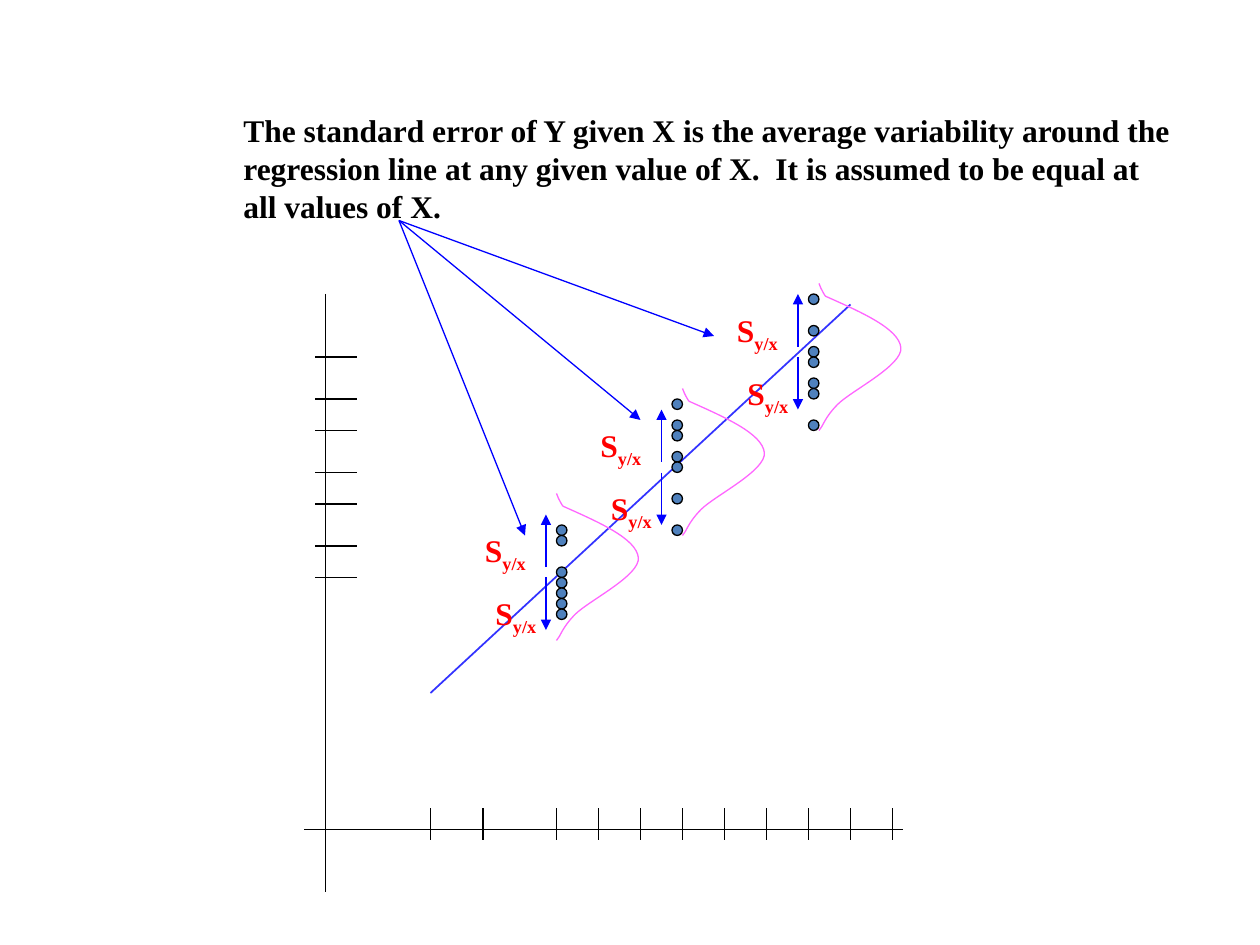
from dataclasses import dataclass

from lxml.etree import SubElement
from pptx import Presentation
from pptx.dml.color import RGBColor
from pptx.enum.shapes import MSO_CONNECTOR, MSO_SHAPE
from pptx.enum.text import MSO_AUTO_SIZE
from pptx.oxml.ns import qn
from pptx.util import Inches, Pt

COLORS = {
    "axis": "000000",
    "regression": "3333FF",
    "arrow": "0000FF",
    "dot": "4F81BD",
    "curve": "FF66FF",
    "caption": "000000",
    "label": "FF0000",
}
FONT = "Times New Roman"
COLUMNS, ROWS = 120, 90
Point = tuple[float, float]


@dataclass(frozen=True)
class Cluster:
    dot_column: int
    dot_rows: tuple[int, ...]
    curve_origin: Point
    arrow_column: int
    arrow_row: int


CLUSTERS = (
    Cluster(77, (28, 31, 33, 34, 36, 37, 40), (78, 27), 76, 33),
    Cluster(53, (50, 51, 54, 55, 56, 57, 58), (53, 47), 52, 54),
    Cluster(64, (38, 40, 41, 43, 44, 47, 50), (65, 37), 63, 44),
)
BELL = (
    (0.6, 1.2), (4.1, 2.76), (7.6, 4.3), (7.8, 6.1), (8, 7.8),
    (3.1, 10.2), (1.8, 11.5), (0.5, 12.8), (0.4, 13.6), (0, 14),
)
BELL_TAIL = ((0.6, 1.2), (0.6, 1.2), (0.2, 0.6), (0, 0))
X_TICKS = (41, 46, *range(53, 86, 4))
Y_TICKS = (34, 38, 41, 45, 48, 52, 55)
POINTER_START = (38, 21)
POINTER_ENDS = ((68, 32), (61, 40), (50, 51))

deck = Presentation()
deck.slide_width, deck.slide_height = Inches(10), Inches(7.5)
page = deck.slides.add_slide(deck.slide_layouts[6])


def across(columns: float) -> int:
    return round(deck.slide_width * columns / COLUMNS)


def down(rows: float) -> int:
    return round(deck.slide_height * rows / ROWS)


def color(name: str) -> RGBColor:
    return RGBColor.from_string(COLORS[name])


def draw_line(start: Point, end: Point, name: str, width: float = 0.75, arrow: bool = False) -> None:
    connector = page.shapes.add_connector(
        MSO_CONNECTOR.STRAIGHT, across(start[0]), down(start[1]), across(end[0]), down(end[1])
    )
    connector.line.color.rgb = color(name)
    connector.line.width = Pt(width)
    if arrow:
        SubElement(connector.line._get_or_add_ln(), qn("a:tailEnd"), type="triangle")
    SubElement(connector._element.spPr, qn("a:effectLst"))


def draw_dot(column: float, row: float) -> None:
    dot = page.shapes.add_shape(MSO_SHAPE.OVAL, across(column), down(row), across(1), down(1))
    dot.shadow.inherit = False
    dot.fill.solid()
    dot.fill.fore_color.rgb = color("dot")
    dot.line.color.rgb = color("axis")
    dot.line.width = Pt(0.75)


def draw_curve(origin: Point, points: tuple[Point, ...]) -> None:
    start, *rest = [(across(origin[0] + x), down(origin[1] + y)) for x, y in points]
    builder = page.shapes.build_freeform(*start)
    builder.add_line_segments(rest, close=False)
    curve = builder.convert_to_shape()
    curve.shadow.inherit = False
    curve.fill.background()
    curve.line.color.rgb = color("curve")
    curve.line.width = Pt(0.75)
    outline = curve._element.find(".//" + qn("a:path"))
    segments = outline.findall(qn("a:lnTo"))
    for first in range(0, len(segments), 3):
        bezier = SubElement(outline, qn("a:cubicBezTo"))
        for segment in segments[first:first + 3]:
            bezier.append(segment[0])
            outline.remove(segment)


def write_text(text: str, *, left: float, top: float, width: float, height: float,
               name: str, subscript: str = "", size: float = 18) -> None:
    box = page.shapes.add_textbox(across(left), down(top), across(width), down(height))
    frame = box.text_frame
    frame.word_wrap = True
    frame.auto_size = MSO_AUTO_SIZE.SHAPE_TO_FIT_TEXT
    para = frame.paragraphs[0]
    for content, baseline in ((text, 0), (subscript, -25000)):
        if not content:
            continue
        span = para.add_run()
        span.text = content
        span.font.name = FONT
        span.font.size = Pt(size)
        span.font.bold = True
        span.font.color.rgb = color(name)
        if baseline:
            span._r.get_or_add_rPr().set("baseline", str(baseline))


def draw_deviation(cluster: Cluster) -> None:
    column, row = cluster.arrow_column, cluster.arrow_row
    draw_line((column, row), (column, row - 5), "arrow", arrow=True)
    draw_line((column, row + 1), (column, row + 6), "arrow", arrow=True)
    for left, top in ((column - 7, row - 4), (column - 6, row + 2)):
        write_text("S", subscript="y/x", left=left, top=top, width=10, height=4.8, name="label")


def main() -> None:
    draw_line((31, 28), (31, 85), "axis")
    draw_line((41, 66), (81, 29), "regression", width=1)
    draw_line((29, 79), (86, 79), "axis")
    for column in X_TICKS:
        draw_line((column, 77), (column, 80), "axis")
    for row in Y_TICKS:
        draw_line((30, row), (34, row), "axis")
    for cluster in CLUSTERS:
        for row in cluster.dot_rows:
            draw_dot(cluster.dot_column, row)
    for cluster in CLUSTERS:
        draw_curve(cluster.curve_origin, BELL)
        draw_curve(cluster.curve_origin, BELL_TAIL)
    write_text(
        "The standard error of Y given X is the average variability around the regression line "
        "at any given value of X.  It is assumed to be equal at all values of X.",
        left=22, top=10, width=91, height=12, name="caption",
    )
    for cluster in CLUSTERS:
        draw_deviation(cluster)
    for end in POINTER_ENDS:
        draw_line(POINTER_START, end, "arrow", arrow=True)
    deck.save("out.pptx")


if __name__ == "__main__":
    main()
